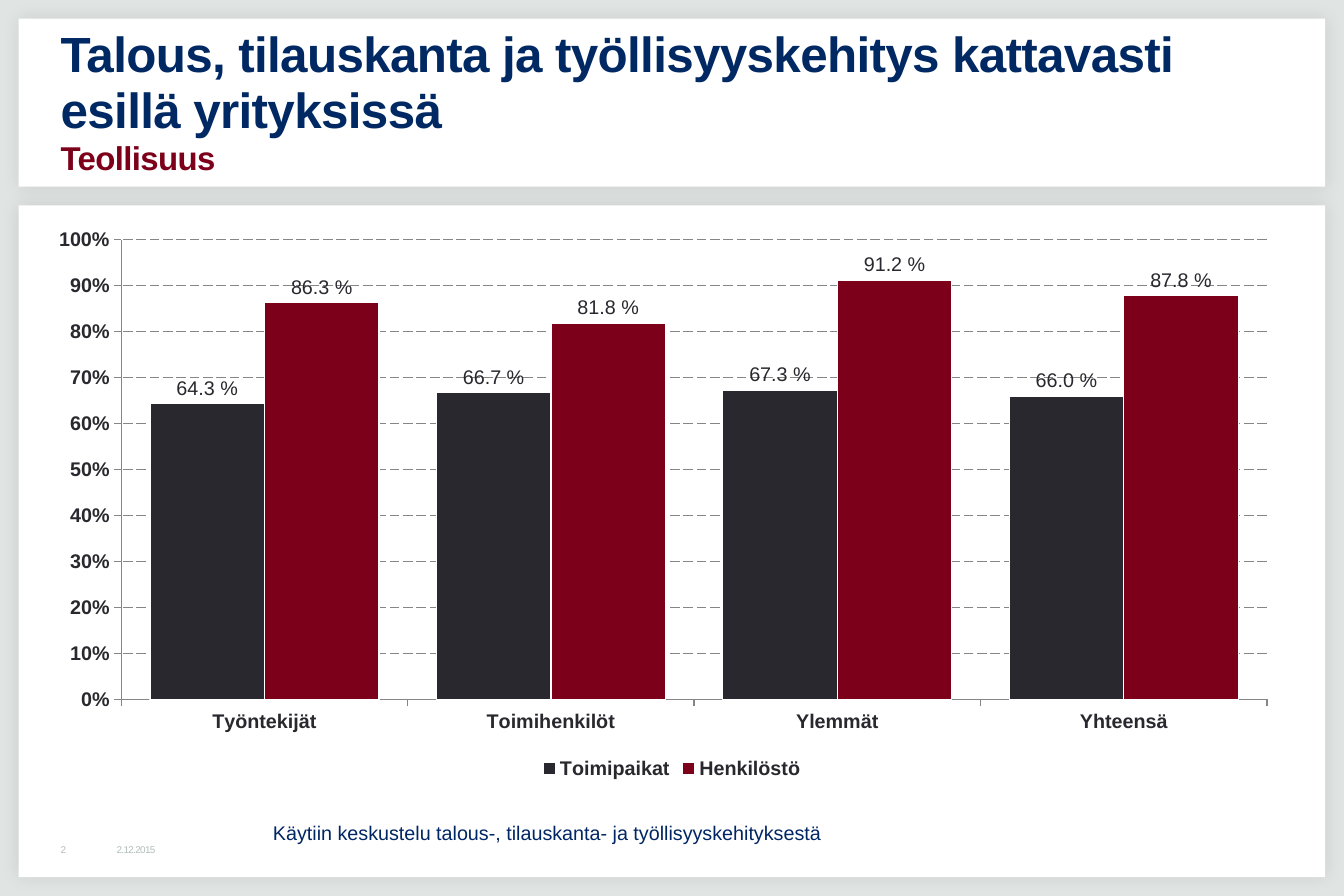
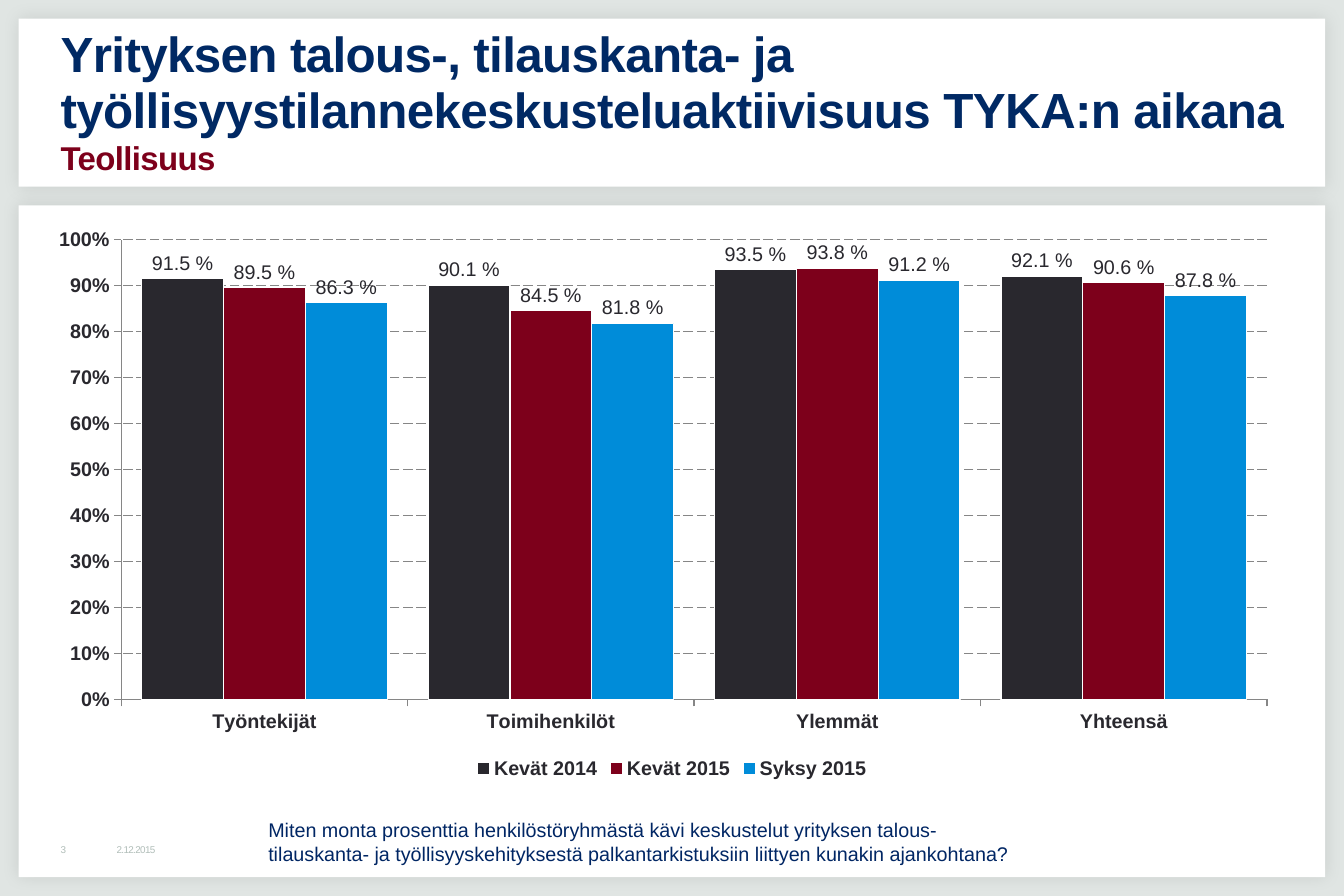
"""Build two slides on how companies discussed finances, orders and employment."""
from dataclasses import dataclass

from lxml.etree import SubElement
from pptx import Presentation
from pptx.chart.chart import Chart
from pptx.chart.data import CategoryChartData
from pptx.dml.color import RGBColor
from pptx.enum.chart import XL_CHART_TYPE, XL_LABEL_POSITION, XL_LEGEND_POSITION, XL_TICK_MARK
from pptx.enum.dml import MSO_LINE
from pptx.enum.shapes import MSO_SHAPE
from pptx.enum.text import MSO_ANCHOR
from pptx.oxml import parse_xml
from pptx.oxml.ns import nsdecls, qn
from pptx.slide import Slide
from pptx.text.text import Font
from pptx.util import Cm, Pt

COLORS = {
    "background": "E0E5E3",
    "panel": "FFFFFF",
    "title": "002964",
    "caption": "002664",
    "footer": "B1BEB9",
    "dark": "29282E",
    "red": "7D001B",
    "blue": "008CD9",
    "grid": "868686",
}
SERIES_COLORS = ("dark", "red", "blue")
FONT = "Arial"
CATEGORIES = ("Työntekijät", "Toimihenkilöt", "Ylemmät", "Yhteensä")
SUBTITLE = "Teollisuus"
DATE = "2.12.2015"
PLOT = {"x": 0.053, "y": 0.028, "w": 0.93, "h": 0.821}


@dataclass(frozen=True)
class Box:
    """A rectangle in centimetres."""

    left: float
    top: float
    width: float
    height: float

    def lengths(self) -> tuple[Cm, Cm, Cm, Cm]:
        """Return the four measures as lengths."""
        return Cm(self.left), Cm(self.top), Cm(self.width), Cm(self.height)


@dataclass(frozen=True)
class Insets:
    """The text margins of a box in centimetres."""

    left: float = 0.25
    top: float = 0.13
    right: float = 0.25
    bottom: float = 0.13


@dataclass(frozen=True)
class TextStyle:
    """The look of one text box."""

    size: float
    color: str
    bold: bool = False
    tracking: float = 0
    line_spacing: float = 1
    anchor: MSO_ANCHOR = MSO_ANCHOR.TOP
    insets: Insets = Insets()


@dataclass(frozen=True)
class ChartSlide:
    """The content of one slide."""

    number: int
    title: str
    title_width: float
    caption: str
    caption_box: Box
    series: dict[str, tuple[float, ...]]


PANELS = (Box(0.4, 0.4, 28, 3.6), Box(0.4, 4.4, 28, 14.4))
NUMBER_BOX = Box(1.2, 18, 1.2, 0.4)
DATE_BOX = Box(2.4, 18, 3.6, 0.4)
CHART_BOX = Box(1.2, 4.8, 26.4, 12)
TITLE_STYLE = TextStyle(30, "title", True, -0.4, 0.95, MSO_ANCHOR.MIDDLE, Insets(left=0.1))
FOOTER_STYLE = TextStyle(
    6, "footer", tracking=-0.4, anchor=MSO_ANCHOR.MIDDLE, insets=Insets(0.1, 0.1, 0.1, 0.1)
)
CAPTION_STYLE = TextStyle(12, "caption")

SLIDES = (
    ChartSlide(
        2,
        "Talous, tilauskanta ja työllisyyskehitys kattavasti esillä yrityksissä",
        26.4,
        "Käytiin keskustelu talous-, tilauskanta- ja työllisyyskehityksestä",
        Box(5.6, 17.45, 15.4, 0.76),
        {
            "Toimipaikat": (0.643, 0.667, 0.673, 0.660),
            "Henkilöstö": (0.863, 0.818, 0.912, 0.878),
        },
    ),
    ChartSlide(
        3,
        "Yrityksen talous-, tilauskanta- ja työllisyystilannekeskusteluaktiivisuus TYKA:n aikana",
        26.8,
        "Miten monta prosenttia henkilöstöryhmästä kävi keskustelut yrityksen talous- "
        "tilauskanta- ja työllisyyskehityksestä palkantarkistuksiin liittyen kunakin ajankohtana?",
        Box(5.5, 17.4, 16.9, 1.27),
        {
            "Kevät 2014": (0.915, 0.901, 0.935, 0.921),
            "Kevät 2015": (0.895, 0.845, 0.938, 0.906),
            "Syksy 2015": (0.863, 0.818, 0.912, 0.878),
        },
    ),
)


def color(name: str) -> RGBColor:
    """Look up a named colour."""
    return RGBColor.from_string(COLORS[name])


def style_font(font: Font, size: float, color_name: str, bold: bool = False) -> None:
    """Set typeface, size, weight and colour."""
    font.name = FONT
    font.size = Pt(size)
    font.bold = bold
    font.color.rgb = color(color_name)


def add_panel(slide: Slide, box: Box) -> None:
    """Draw a white panel with a soft shadow."""
    panel = slide.shapes.add_shape(MSO_SHAPE.RECTANGLE, *box.lengths())
    panel.fill.solid()
    panel.fill.fore_color.rgb = color("panel")
    panel.line.fill.background()
    panel.shadow.inherit = False
    effects = panel._element.spPr.find(qn("a:effectLst"))
    effects.append(parse_xml(
        f'<a:outerShdw {nsdecls("a")} blurRad="{Pt(10)}" dist="0" dir="2700000" rotWithShape="0">'
        '<a:srgbClr val="000000"><a:alpha val="10000"/></a:srgbClr></a:outerShdw>'
    ))


def add_text(slide: Slide, box: Box, text: str, style: TextStyle, subtitle: str = "") -> None:
    """Add a one-paragraph text box with an optional smaller last line."""
    frame = slide.shapes.add_textbox(*box.lengths()).text_frame
    frame.word_wrap = True
    frame.vertical_anchor = style.anchor
    frame.margin_left = Cm(style.insets.left)
    frame.margin_top = Cm(style.insets.top)
    frame.margin_right = Cm(style.insets.right)
    frame.margin_bottom = Cm(style.insets.bottom)
    paragraph = frame.paragraphs[0]
    paragraph.line_spacing = style.line_spacing
    paragraph.add_run().text = text
    if subtitle:
        paragraph.add_line_break()
        subtitle_run = paragraph.add_run()
        subtitle_run.text = subtitle
        subtitle_run.font.size = Pt(20)
        subtitle_run.font.color.rgb = color("red")
    style_font(paragraph.font, style.size, style.color, style.bold)
    if style.tracking:
        for font in (paragraph.font, *(run.font for run in paragraph.runs)):
            font._element.set("spc", str(round(style.tracking * 100)))


def set_plot_layout(chart: Chart) -> None:
    """Fix the inner plot area as fractions of the chart."""
    plot_area = chart._chartSpace.chart.plotArea
    for old_layout in plot_area.findall(qn("c:layout")):
        plot_area.remove(old_layout)
    layout = parse_xml(f'<c:layout {nsdecls("c")}/>')
    manual = SubElement(layout, qn("c:manualLayout"))
    settings = {"layoutTarget": "inner", "xMode": "edge", "yMode": "edge", **PLOT}
    for tag, value in settings.items():
        SubElement(manual, qn(f"c:{tag}")).set("val", str(value))
    plot_area.insert(0, layout)


def style_axes(chart: Chart) -> None:
    """Format both axes and the dashed gridlines."""
    for axis in (chart.category_axis, chart.value_axis):
        axis.major_tick_mark = XL_TICK_MARK.OUTSIDE
        axis.minor_tick_mark = XL_TICK_MARK.NONE
        axis.format.line.color.rgb = color("grid")
        axis.format.line.width = Pt(0.75)
        style_font(axis.tick_labels.font, 12, "dark", True)
    value_axis = chart.value_axis
    value_axis.minimum_scale = 0
    value_axis.maximum_scale = 1
    value_axis.major_unit = 0.1
    value_axis.tick_labels.number_format = "0%"
    value_axis.tick_labels.number_format_is_linked = False
    gridline = value_axis.major_gridlines.format.line
    gridline.color.rgb = color("grid")
    gridline.width = Pt(0.75)
    gridline.dash_style = MSO_LINE.LONG_DASH


def add_column_chart(slide: Slide, series_values: dict[str, tuple[float, ...]]) -> None:
    """Add the clustered column chart."""
    data = CategoryChartData(number_format="0.0%")
    data.categories = CATEGORIES
    for name, values in series_values.items():
        data.add_series(name, values)
    chart = slide.shapes.add_chart(
        XL_CHART_TYPE.COLUMN_CLUSTERED, *CHART_BOX.lengths(), data
    ).chart
    style_font(chart.font, 12, "dark")
    chart.has_title = False
    chart.has_legend = True
    chart.legend.position = XL_LEGEND_POSITION.BOTTOM
    chart.legend.include_in_layout = False
    style_font(chart.legend.font, 12, "dark", True)
    style_axes(chart)
    set_plot_layout(chart)
    plot = chart.plots[0]
    plot.gap_width = 50
    plot.overlap = 0
    plot.vary_by_categories = False
    for series, color_name in zip(plot.series, SERIES_COLORS):
        series.format.fill.solid()
        series.format.fill.fore_color.rgb = color(color_name)
        series.format.line.color.rgb = color("panel")
        series.format.line.width = Pt(0.75)
        labels = series.data_labels
        labels.show_value = True
        labels.number_format = "0.0\\ %"
        labels.number_format_is_linked = False
        labels.position = XL_LABEL_POSITION.OUTSIDE_END
        style_font(labels.font, 12, "dark")


def build_slide(slide: Slide, content: ChartSlide) -> None:
    """Draw the shared frame and the content of one slide."""
    slide.background.fill.solid()
    slide.background.fill.fore_color.rgb = color("background")
    for box in PANELS:
        add_panel(slide, box)
    add_text(slide, DATE_BOX, DATE, FOOTER_STYLE)
    add_text(slide, NUMBER_BOX, str(content.number), FOOTER_STYLE)
    title_box = Box(1.2, 0.8, content.title_width, 2.8)
    add_text(slide, title_box, content.title, TITLE_STYLE, SUBTITLE)
    add_column_chart(slide, content.series)
    add_text(slide, content.caption_box, content.caption, CAPTION_STYLE)


def main() -> None:
    """Build and save the presentation."""
    presentation = Presentation()
    presentation.slide_width = Cm(28.8)
    presentation.slide_height = Cm(19.2)
    for content in SLIDES:
        build_slide(presentation.slides.add_slide(presentation.slide_layouts[6]), content)
    presentation.save("out.pptx")


if __name__ == "__main__":
    main()
